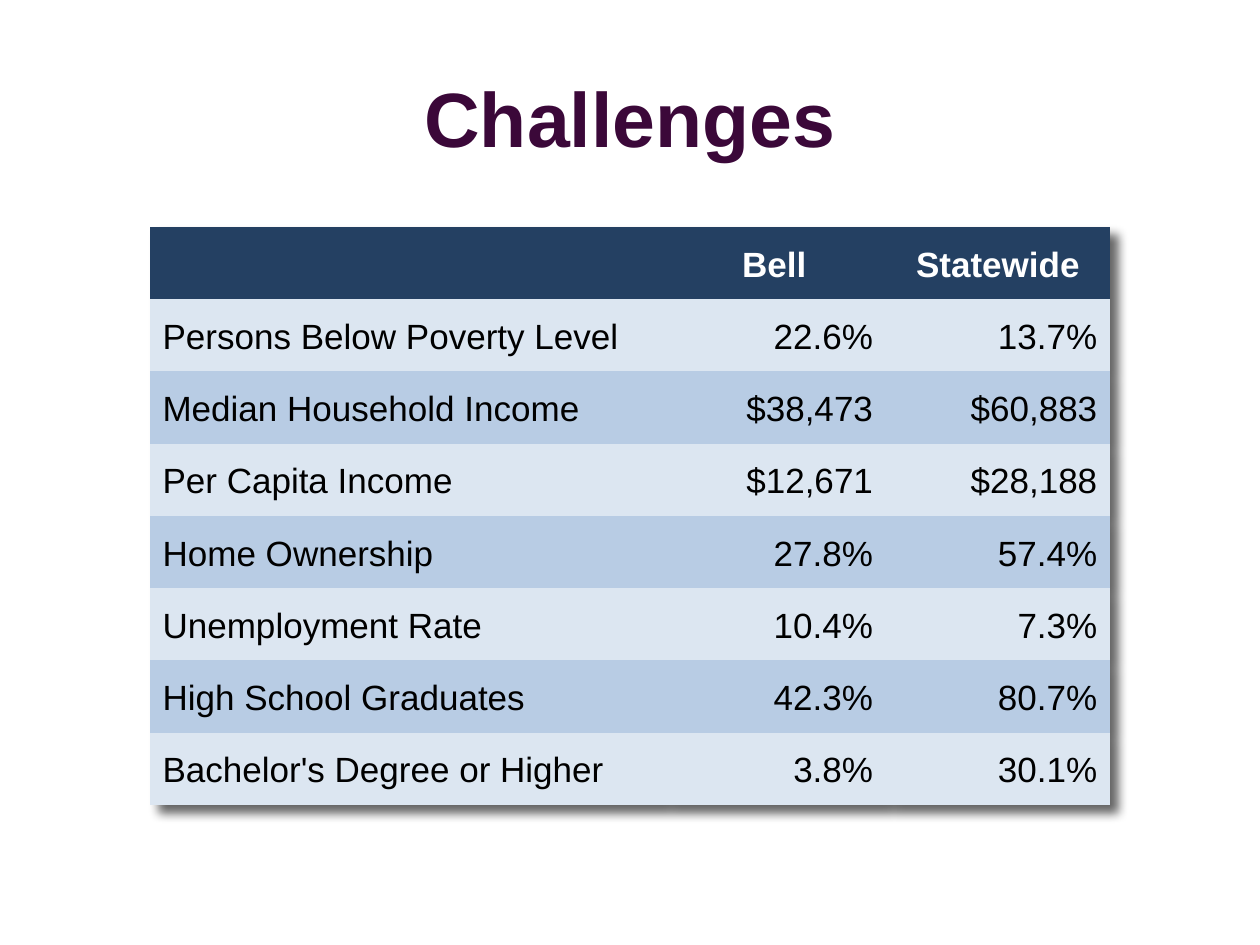
"""Build the Challenges slide, comparing Bell with the whole state."""
import dataclasses

import lxml.etree
import pptx
import pptx.dml.color
import pptx.enum.text
import pptx.oxml
import pptx.oxml.ns
import pptx.util
from pptx.util import Inches

ALIGN = pptx.enum.text.PP_ALIGN
MIDDLE = pptx.enum.text.MSO_ANCHOR.MIDDLE
PLAIN_STYLE = "{2D5ABB26-0587-4C30-8999-92F81FD0307C}"


@dataclasses.dataclass(frozen=True)
class Theme:
    """Hold the colours and type sizes."""
    font: str = "Arial"
    title_size: int = 44
    table_size: int = 20
    title: str = "3B0839"
    header_fill: str = "244062"
    header_text: str = "FFFFFF"
    body_text: str = "000000"
    bands: tuple = ("DCE6F1", "B8CCE4")


THEME = Theme()
COLUMN_WIDTHS = (4.07, 1.77, 1.78)
INDICATORS = (
    ("", "Bell", "Statewide"),
    ("Persons Below Poverty Level", "22.6%", "13.7%"),
    ("Median Household Income", "$38,473", "$60,883"),
    ("Per Capita Income", "$12,671", "$28,188"),
    ("Home Ownership", "27.8%", "57.4%"),
    ("Unemployment Rate", "10.4%", "7.3%"),
    ("High School Graduates", "42.3%", "80.7%"),
    ("Bachelor's Degree or Higher", "3.8%", "30.1%"),
)


def write(frame, text, size, color, bold, align):
    """Put one formatted paragraph into a text frame."""
    frame.text = text
    paragraph = frame.paragraphs[0]
    paragraph.alignment = align
    for run in paragraph.runs:
        run.font.name = THEME.font
        run.font.size = pptx.util.Pt(size)
        run.font.bold = bold
        run.font.color.rgb = pptx.dml.color.RGBColor.from_string(color)


def add_title(slide, text):
    """Add the centred slide title."""
    title = slide.shapes.add_textbox(Inches(0.5), Inches(0.3), Inches(9), Inches(1.25))
    title.text_frame.word_wrap = True
    title.text_frame.vertical_anchor = MIDDLE
    write(title.text_frame, text, THEME.title_size, THEME.title, True, ALIGN.CENTER)


def fill_cell(cell, text, row, column):
    """Style a cell by its place in the table and write its text."""
    header = row == 0
    fill = THEME.header_fill if header else THEME.bands[(row - 1) % 2]
    cell.fill.solid()
    cell.fill.fore_color.rgb = pptx.dml.color.RGBColor.from_string(fill)
    cell.vertical_anchor = MIDDLE
    label = not header and column == 0
    value = not header and column > 0
    cell.margin_left = Inches(0.1 if label else 0.03)
    cell.margin_right = Inches(0.1 if value else 0.03)
    cell.margin_top = Inches(0.03)
    cell.margin_bottom = 0
    align = ALIGN.CENTER if header else ALIGN.RIGHT if value else ALIGN.LEFT
    color = THEME.header_text if header else THEME.body_text
    write(cell.text_frame, text, THEME.table_size, color, header, align)


def style_table(table):
    """Replace the banded style with a plain one and a soft shadow."""
    properties = table._tbl.tblPr
    properties.find(pptx.oxml.ns.qn("a:tableStyleId")).text = PLAIN_STYLE
    namespace = pptx.oxml.ns.nsdecls("a")
    properties.insert(0, pptx.oxml.parse_xml(
        f'<a:effectLst {namespace}><a:outerShdw blurRad="76200" dist="88900" '
        'dir="2700000" algn="tl" rotWithShape="0"><a:srgbClr val="000000">'
        '<a:alpha val="60000"/></a:srgbClr></a:outerShdw></a:effectLst>'))


def add_indicators(slide):
    """Add the table of indicators."""
    table = slide.shapes.add_table(
        len(INDICATORS), len(COLUMN_WIDTHS), Inches(1.19), Inches(1.8),
        Inches(sum(COLUMN_WIDTHS)), Inches(4.59)).table
    style_table(table)
    for column, width in zip(table.columns, COLUMN_WIDTHS):
        column.width = Inches(width)
    for row, texts in enumerate(INDICATORS):
        for column, text in enumerate(texts):
            fill_cell(table.cell(row, column), text, row, column)


def main():
    """Build and save the slide."""
    deck = pptx.Presentation()
    deck.slide_width, deck.slide_height = Inches(10), Inches(7.5)
    slide = deck.slides.add_slide(deck.slide_layouts[6])
    add_title(slide, "Challenges")
    add_indicators(slide)
    deck.save("out.pptx")


if __name__ == "__main__":
    main()
